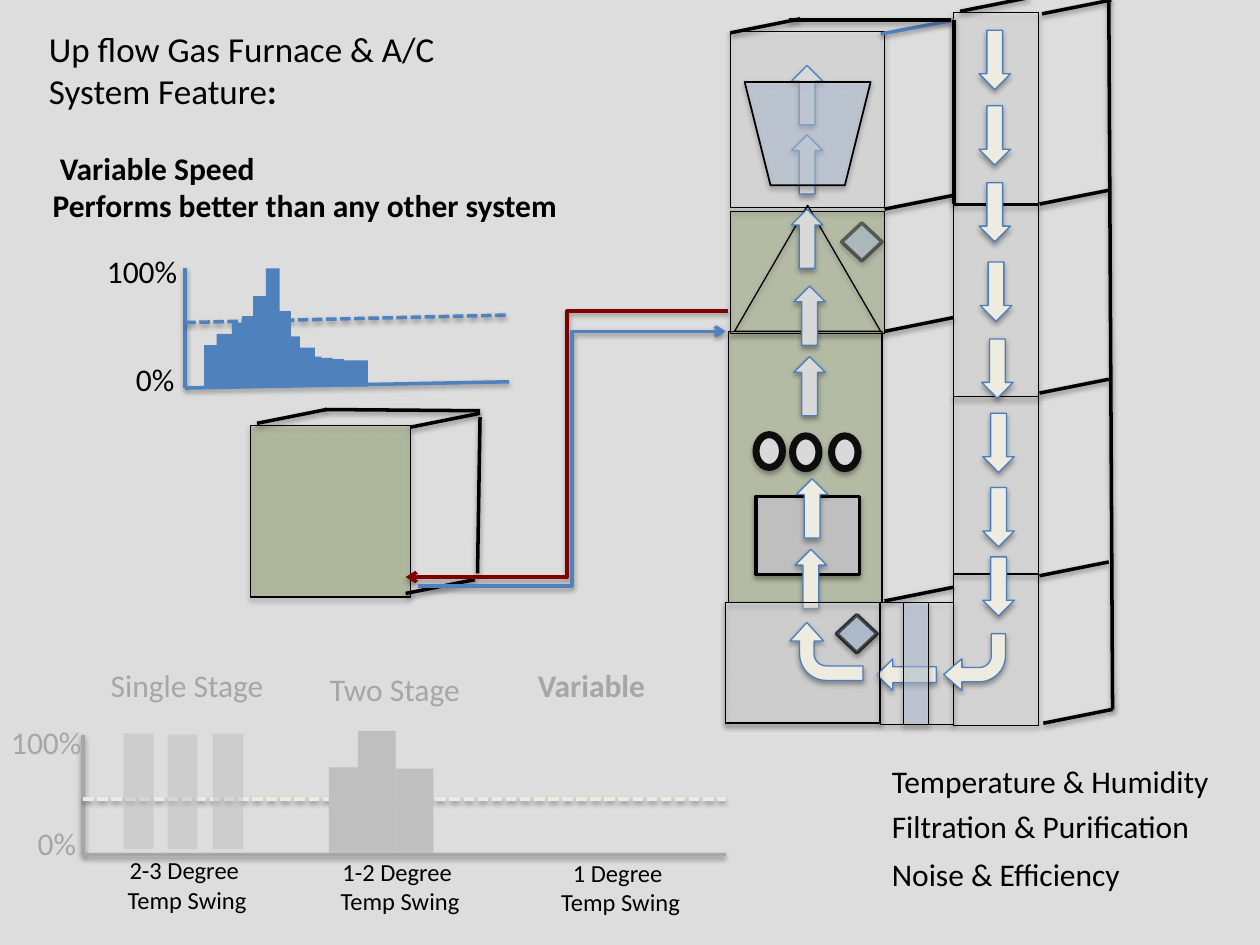
import lxml.etree
import pptx
import pptx.dml.color
import pptx.enum.dml
import pptx.enum.shapes
import pptx.enum.text
import pptx.oxml.ns
import pptx.util

Inches, Pt = pptx.util.Inches, pptx.util.Pt
qn = pptx.oxml.ns.qn
SHAPE = pptx.enum.shapes.MSO_SHAPE
CONNECTOR = pptx.enum.shapes.MSO_CONNECTOR

BLACK, BLUE, GREEN, PANEL = "000000", "4F81BD", "77933C", "F2F2F2"
CREAM, ICE, SILVER, PALE, GRAY = "EEECE1", "C6D9F1", "BFBFBF", "D9D9D9", "A6A6A6"
ARROW_EDGE, MAROON = "4B7EBC", "800000"

# Cabinets and ducts: left, top, width, height, colour, opacity %
base = (5.76, 4.78, 1.22, 0.96, PANEL, 30)
cabinets = [
    (5.78, 2.63, 1.22, 2.15, GREEN, 25),
    (5.8, 1.68, 1.22, 0.97, GREEN, 25),
    (7.57, 4.56, 0.67, 1.2, PANEL, 30),
    (7.57, 3.15, 0.67, 1.4, PANEL, 30),
    (7.57, 1.63, 0.67, 1.52, PANEL, 30),
    (7.57, 0.1, 0.67, 1.52, PANEL, 30),
    (6.99, 4.78, 0.58, 0.97, PANEL, 30),
    (5.8, 0.25, 1.22, 1.4, PANEL, 30),
    base,
    (1.99, 3.38, 1.27, 1.36, GREEN, 30),
]
burners = [(6, 3.45), (6.29, 3.46), (6.6, 3.46)]

# Receding edges all share one slope; these are their front ends
receding_edges = [
    (7.02, 1.66), (7.02, 2.63), (7.02, 4.77), (8.25, 4.57), (8.25, 3.12),
    (8.28, 5.74), (8.25, 1.62), (5.8, 0.26), (8.27, 0.11), (7.62, 0.09),
    (3.22, 4.71), (3.26, 3.39), (2.04, 3.36),
]
other_edges = [
    (7.57, 0.16, 7.57, 1.62), (6.26, 0.16, 7.55, 0.16), (8.8, 0, 8.83, 5.63),
    (3.81, 3.31, 3.79, 4.55), (2.58, 3.25, 3.81, 3.26),
]

# Air flow: left, top of each arrow
return_air = [(7.77, 0.24), (7.77, 0.84), (7.77, 1.45), (7.78, 2.08),
              (7.79, 2.69), (7.8, 3.28), (7.8, 3.87), (7.8, 4.42)]
heated_air = [(6.31, 4.36), (6.32, 3.8)]
supply_air = [(6.3, 2.83), (6.3, 2.27), (6.28, 1.66), (6.28, 1.07), (6.28, 0.52)]

# Refrigerant pipes: start, end, colour
pipes = [(5.78, 2.47, 3.22, 4.58, MAROON), (3.32, 4.65, 5.76, 2.63, BLUE)]
sensors = [(6.64, 4.88), (6.68, 1.77), (6.64, 4.88)]

# Charts: axis lines with dash flag, bars as left, top, width
chart_lines = [
    (1.47, 2.13, 1.47, 3.08, BLUE, False), (1.47, 3.08, 4.04, 3.03, BLUE, False),
    (1.47, 2.56, 4.04, 2.5, BLUE, True), (0.66, 5.83, 0.66, 6.78, GRAY, False),
    (0.66, 6.78, 5.76, 6.78, GRAY, False), (0.66, 6.34, 5.76, 6.34, CREAM, True),
]
variable_bars = [
    (1.62, 2.74, 0.14), (1.72, 2.65, 0.14), (1.84, 2.56, 0.11), (1.92, 2.51, 0.11),
    (2.01, 2.35, 0.11), (2.11, 2.13, 0.11), (2.2, 2.47, 0.11), (2.24, 2.67, 0.14),
    (2.36, 2.76, 0.14), (2.44, 2.83, 0.11), (2.53, 2.84, 0.11), (2.62, 2.85, 0.11),
    (2.71, 2.86, 0.11), (2.81, 2.86, 0.11),
]
single_stage_bars = [(0.98, 5.82, 0.24), (1.33, 5.83, 0.24), (1.69, 5.82, 0.24)]
two_stage_bars = [(2.61, 6.09, 0.3), (2.84, 5.8, 0.3), (3.14, 6.1, 0.3)]
bar_groups = [  # bars, baseline, colour, opacity %
    (variable_bars, 3.07, BLUE, 100),
    (single_stage_bars, 6.74, SILVER, 50),
    (two_stage_bars, 6.77, SILVER, 100),
]

# Labels: text, left, top, width, height, size, colour, bold, centred
labels = [
    ("Up flow Gas Furnace & A/C\nSystem Feature", 0.29, 0.17, 3.29, 0.77, 20, BLACK, False, False),
    (" Variable Speed\nPerforms better than any other system", 0.32, 1.13, 5, 0.71, 18, BLACK, True, False),
    ("100%", 0.75, 1.95, 0.77, 0.4, 18, BLACK, False, False),
    ("0%", 0.98, 2.81, 0.51, 0.4, 18, BLACK, False, False),
    ("100%", -0.01, 5.69, 0.77, 0.4, 18, GRAY, False, False),
    ("0%", 0.2, 6.49, 0.51, 0.4, 18, GRAY, False, False),
    ("Single Stage", 0.78, 5.24, 1.46, 0.4, 18, GRAY, False, False),
    ("Two Stage", 2.52, 5.27, 1.28, 0.4, 18, GRAY, False, False),
    ("Variable", 4.17, 5.24, 1.08, 0.4, 18, GRAY, True, False),
    ("2-3 Degree \nTemp Swing", 0.9, 6.74, 1.17, 0.57, 14, BLACK, False, True),
    ("1-2 Degree \nTemp Swing", 2.59, 6.75, 1.17, 0.57, 14, BLACK, False, True),
    ("1 Degree \nTemp Swing", 4.34, 6.76, 1.17, 0.57, 14, BLACK, False, True),
    ("Temperature & Humidity", 6.98, 6, 2.84, 0.4, 18, BLACK, False, False),
    ("Filtration & Purification", 6.98, 6.36, 2.66, 0.4, 18, BLACK, False, False),
    ("Noise & Efficiency", 6.98, 6.74, 2.08, 0.4, 18, BLACK, False, False),
]

presentation = pptx.Presentation()
presentation.slide_width, presentation.slide_height = Inches(10), Inches(7.5)
slide = presentation.slides.add_slide(presentation.slide_layouts[6])


def rgb(color):
    return pptx.dml.color.RGBColor.from_string(color)


def paint(fill, color):
    fill.solid()
    fill.fore_color.rgb = rgb(color)


def set_opacity(parent, percent):
    color = parent.find(qn("a:solidFill")).find(qn("a:srgbClr"))
    lxml.etree.SubElement(color, qn("a:alpha"), val=str(percent * 1000))


def add_shadow(effects, distance, percent):
    shadow = lxml.etree.SubElement(
        effects, qn("a:outerShdw"), blurRad=str(Pt(3.1)), dist=str(Pt(distance)),
        dir="5400000", rotWithShape="0")
    color = lxml.etree.SubElement(shadow, qn("a:srgbClr"), val=BLACK)
    lxml.etree.SubElement(color, qn("a:alpha"), val=str(percent * 1000))


def draw(kind, left, top, width, height, color=None, opacity=100, edge=BLACK,
         weight=0.75, edge_opacity=100, rotation=0, adjustments=()):
    shape = slide.shapes.add_shape(kind, *map(Inches, (left, top, width, height)))
    shape.rotation = rotation
    for index, value in enumerate(adjustments):
        shape.adjustments[index] = value
    properties = shape._element.spPr
    shape.shadow.inherit = False
    if color:
        paint(shape.fill, color)
        if opacity < 100:
            set_opacity(properties, opacity)
    else:
        shape.fill.background()
    if edge:
        paint(shape.line.fill, edge)
        shape.line.width = Pt(weight)
        if edge_opacity < 100:
            set_opacity(properties.find(qn("a:ln")), edge_opacity)
        add_shadow(properties.find(qn("a:effectLst")), 1.8, 35)
    else:
        shape.line.fill.background()


def connect(x1, y1, x2, y2, color=BLACK, dashed=False, kind=CONNECTOR.STRAIGHT, arrow=False):
    connector = slide.shapes.add_connector(kind, *map(Inches, (x1, y1, x2, y2)))
    paint(connector.line.fill, color)
    connector.line.width = Pt(2)
    if dashed:
        connector.line.dash_style = pptx.enum.dml.MSO_LINE.SQUARE_DOT
    properties = connector._element.spPr
    if arrow:
        lxml.etree.SubElement(properties.find(qn("a:ln")), qn("a:tailEnd"), type="arrow")
    add_shadow(lxml.etree.SubElement(properties, qn("a:effectLst")), 1.6, 38)


def write(text, left, top, width, height, size, color, bold, centred):
    box = slide.shapes.add_textbox(*map(Inches, (left, top, width, height)))
    frame = box.text_frame
    frame.text = text
    frame.word_wrap = width == 5
    frame.auto_size = pptx.enum.text.MSO_AUTO_SIZE.SHAPE_TO_FIT_TEXT
    if text.endswith("Feature"):
        frame.paragraphs[-1].add_run().text = ":"
    for paragraph in frame.paragraphs:
        if centred:
            paragraph.alignment = pptx.enum.text.PP_ALIGN.CENTER
        for run in paragraph.runs:
            run.font.name, run.font.size = "Calibri", Pt(size)
            run.font.bold = bold or run.text == ":"
            run.font.color.rgb = rgb(color)


paint(slide.background.fill, "DDDDDD")

# Cabinets, coil, blower and burners
for cabinet in cabinets:
    draw(SHAPE.RECTANGLE, *cabinet)
draw(SHAPE.ISOSCELES_TRIANGLE, 5.83, 1.63, 1.16, 1)
draw(SHAPE.RECTANGLE, 6, 3.94, 0.82, 0.62, SILVER, weight=2)
for left, top in burners:
    draw(SHAPE.OVAL, left, top, 0.21, 0.26, PALE, edge="0D0D0D", weight=4)

# Depth edges
for x, y in receding_edges:
    connect(x, y, x + 0.55, y - 0.11)
connect(6.99, 0.27, 7.57, 0.16, BLUE)
for edge in other_edges:
    connect(*edge)

# Air flow
for positions, color, rotation in [(return_air, CREAM, 0), (heated_air, CREAM, 180),
                                   (supply_air, PALE, 180), ([(7.07, 5.12)], CREAM, 90)]:
    for left, top in positions:
        draw(SHAPE.DOWN_ARROW, left, top, 0.25, 0.47, color, edge=ARROW_EDGE, rotation=rotation)
draw(SHAPE.BENT_ARROW, 7.49, 5.03, 0.49, 0.45, CREAM, edge=ARROW_EDGE, rotation=180,
     adjustments=(0.25, 0.28, 0.32, 0.46))

# Pipes, evaporator, filter, base and sensors
for *ends, color in pipes:
    connect(*ends, color, kind=CONNECTOR.ELBOW, arrow=True)
draw(SHAPE.TRAPEZOID, 5.91, 0.65, 1, 0.82, ICE, 47, weight=1, rotation=180)
draw(SHAPE.RECTANGLE, 7.17, 4.78, 0.2, 0.97, ICE, 47)
draw(SHAPE.RECTANGLE, *base)
draw(SHAPE.BENT_ARROW, 6.33, 4.88, 0.46, 0.58, CREAM, edge=ARROW_EDGE, rotation=270,
     adjustments=(0.25, 0.29, 0.32, 0.46))
for left, top in sensors:
    draw(SHAPE.DIAMOND, left, top, 0.32, 0.3, ICE, 47, weight=2, edge_opacity=50)

# Charts
for line in chart_lines:
    connect(*line)
for bars, baseline, color, opacity in bar_groups:
    for left, top, width in bars:
        draw(SHAPE.RECTANGLE, left, top, width, baseline - top, color, opacity, edge=None)

# Labels
for label in labels:
    write(*label)

presentation.save("out.pptx")
